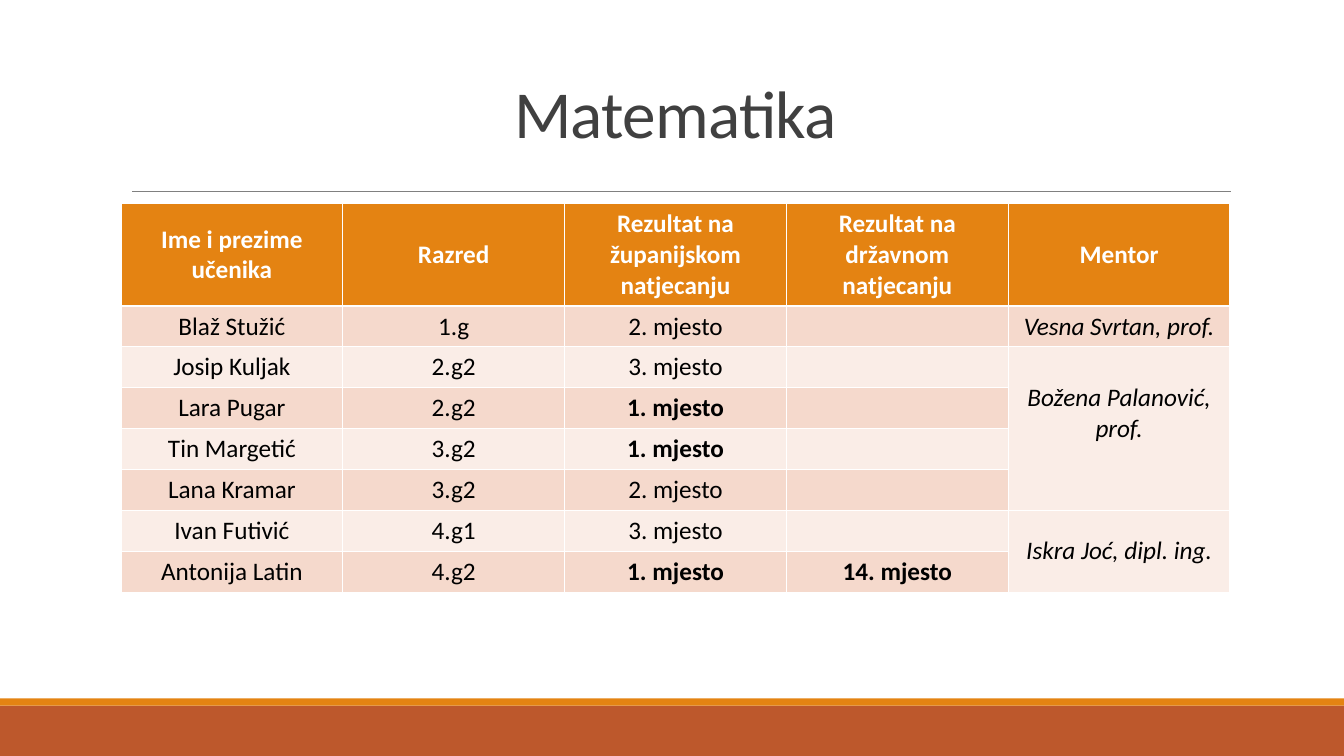
"""Builds the slide with the mathematics competition results."""
from pptx import Presentation, util as u
from pptx.dml.color import RGBColor
from pptx.enum import shapes, text
from pptx.oxml.xmlchemy import OxmlElement

TITLE = "Matematika"
HEADINGS = ("Ime i prezime učenika", "Razred", "Rezultat na županijskom natjecanju",
            "Rezultat na državnom natjecanju", "Mentor")
PUPILS = [
    ("Blaž Stužić", "1.g", "2. mjesto", ""),
    ("Josip Kuljak", "2.g2", "3. mjesto", ""),
    ("Lara Pugar", "2.g2", "1. mjesto", ""),
    ("Tin Margetić", "3.g2", "1. mjesto", ""),
    ("Lana Kramar", "3.g2", "2. mjesto", ""),
    ("Ivan Futivić", "4.g1", "3. mjesto", ""),
    ("Antonija Latin", "4.g2", "1. mjesto", "14. mjesto"),
]
MENTORS = [("Vesna Svrtan, prof.", 1, 0.05), ("Božena Palanović, prof.", 4, 0.35),
           ("Iskra Joć, dipl. ing.", 2, 0.05)]
BOLD_RESULTS = {"1. mjesto", "14. mjesto"}
COLORS = {"orange": "E48312", "rust": "BD582C", "rule": "808080", "title": "404040",
          "white": "FFFFFF", "black": "000000", "odd": "F5D9CC", "even": "FAEDE7"}
WIDTH, HEIGHT = 13.33, 7.5
LEFT, CONTENT_WIDTH = 1.2, 11
TABLE_TOP, HEADER_HEIGHT, ROW_HEIGHT = 2.02, 1.0, 0.405
BANDS = [(7, 0.5, "rust"), (6.93, 0.07, "orange")]


def color(name):
    return RGBColor.from_string(COLORS[name])


def box(*lengths):
    return [u.Inches(length) for length in lengths]


def write(frame, words, ink, **formats):
    paragraph = frame.paragraphs[0]
    paragraph.alignment = text.PP_ALIGN.CENTER
    run = paragraph.add_run()
    run.text = words
    run.font.color.rgb = color(ink)
    for name, value in {"name": "Calibri", "size": u.Pt(18), **formats}.items():
        setattr(run.font, name, value)
    return paragraph, run


def fill_cell(cell, words, fill, ink="black", middle=True, **formats):
    cell.fill.solid()
    cell.fill.fore_color.rgb = color(fill)
    cell.vertical_anchor = text.MSO_ANCHOR.MIDDLE if middle else text.MSO_ANCHOR.TOP
    if words:
        write(cell.text_frame, words, ink, **formats)


def add_frame(slide):
    for top, height, fill in BANDS:
        band = slide.shapes.add_shape(shapes.MSO_SHAPE.RECTANGLE, *box(0, top, WIDTH, height))
        band.shadow.inherit = False
        band.fill.solid()
        band.fill.fore_color.rgb = color(fill)
        band.line.fill.background()
    rule = slide.shapes.add_connector(shapes.MSO_CONNECTOR.STRAIGHT, *box(1.31, 1.9, 12.21, 1.9))
    rule.line.color.rgb = color("rule")
    rule.line.width = u.Pt(0.5)
    rule._element.spPr.append(OxmlElement("a:effectLst"))


def add_title(slide):
    title = slide.shapes.title
    title.left, title.top, title.width, title.height = box(LEFT, 0.31, CONTENT_WIDTH, 1.25)
    frame = title.text_frame
    frame.auto_size = text.MSO_AUTO_SIZE.NONE
    frame.vertical_anchor = text.MSO_ANCHOR.BOTTOM
    paragraph, run = write(frame, TITLE, "title", size=u.Pt(48))
    paragraph.line_spacing = 0.85
    run.font._element.set("spc", "-50")


def add_results(slide):
    table_height = HEADER_HEIGHT + ROW_HEIGHT * len(PUPILS)
    results = slide.shapes.add_table(len(PUPILS) + 1, len(HEADINGS), *box(
        LEFT, TABLE_TOP, CONTENT_WIDTH, table_height)).table
    for row in results.rows:
        row.height = u.Inches(ROW_HEIGHT)
    results.rows[0].height = u.Inches(HEADER_HEIGHT)
    for column, heading in enumerate(HEADINGS):
        fill_cell(results.cell(0, column), heading, "orange", "white", bold=True)
    for row, pupil in enumerate(PUPILS, 1):
        for column, entry in enumerate(pupil):
            fill_cell(results.cell(row, column), entry, "odd" if row % 2 else "even",
                      middle=column < 2, bold=entry in BOLD_RESULTS)
    row, mentor_column = 1, len(HEADINGS) - 1
    for mentor, span, bottom in MENTORS:
        cell = results.cell(row, mentor_column)
        if span > 1:
            cell.merge(results.cell(row + span - 1, mentor_column))
        fill_cell(cell, mentor, "odd" if row % 2 else "even", bold=False, italic=True)
        cell.margin_bottom = u.Inches(bottom)
        row += span


def main():
    deck = Presentation()
    deck.slide_width, deck.slide_height = box(WIDTH, HEIGHT)
    slide = deck.slides.add_slide(deck.slide_layouts.get_by_name("Title Only"))
    add_frame(slide)
    add_title(slide)
    add_results(slide)
    deck.save("out.pptx")


if __name__ == "__main__":
    main()
